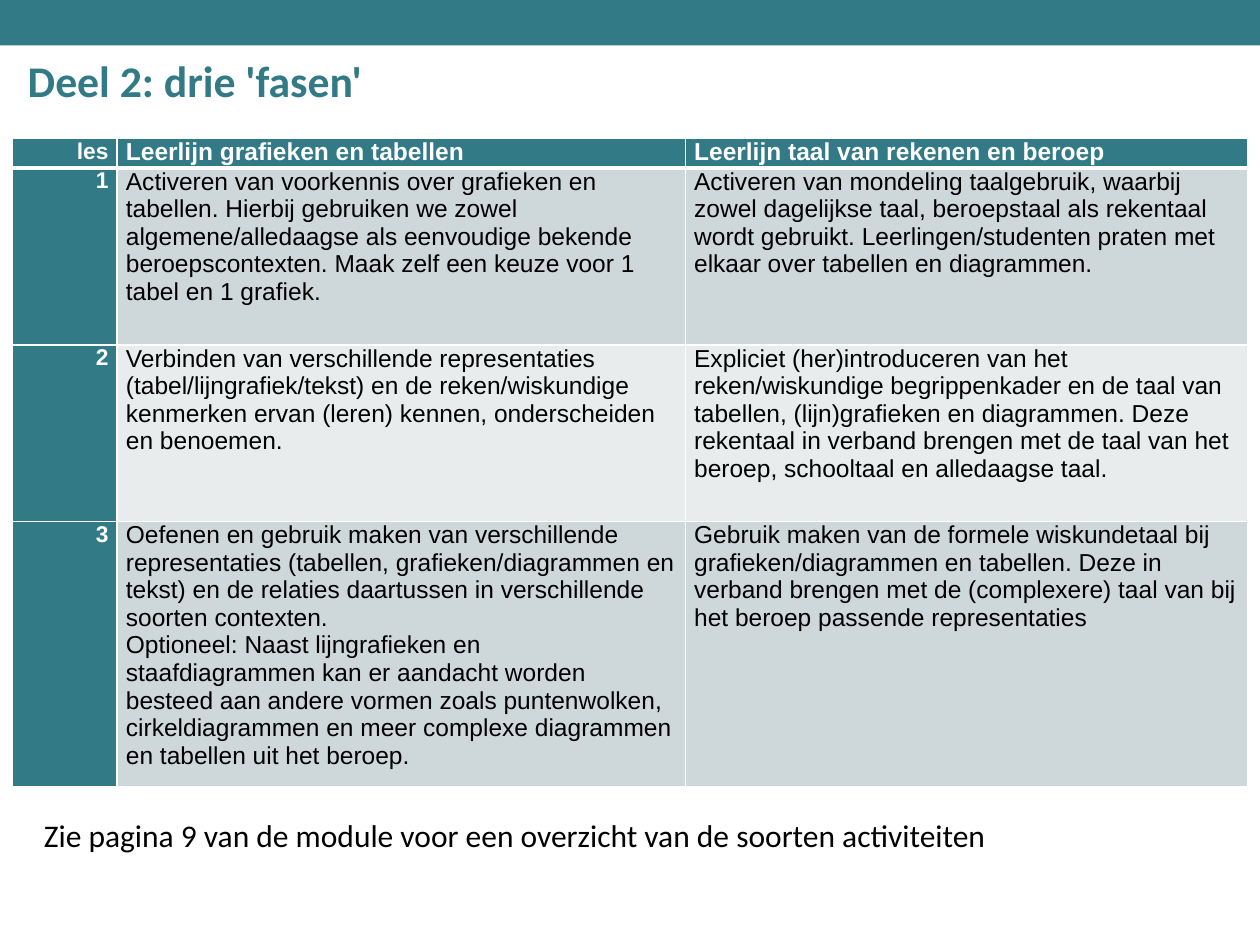
from lxml.etree import SubElement
from pptx import Presentation
from pptx.dml.color import RGBColor
from pptx.enum.shapes import MSO_SHAPE
from pptx.enum.text import MSO_ANCHOR, PP_ALIGN
from pptx.oxml.ns import qn
from pptx.util import Pt

TEAL = RGBColor(0x32, 0x7A, 0x86)
BAND_DARK = RGBColor(0xCE, 0xD7, 0xD9)
BAND_LIGHT = RGBColor(0xE8, 0xEC, 0xED)
WHITE = RGBColor(0xFF, 0xFF, 0xFF)
BLACK = RGBColor(0, 0, 0)


def write_text(text_frame, text, size, color, font="Arial", bold=False, align=PP_ALIGN.LEFT):
    text_frame.text = text
    for paragraph in text_frame.paragraphs:
        paragraph.alignment = align
        paragraph.font.size = Pt(size)
        paragraph.font.name = font
        paragraph.font.bold = bold
        paragraph.font.color.rgb = color


presentation = Presentation()
presentation.slide_width = Pt(720)
presentation.slide_height = Pt(540)
slide = presentation.slides.add_slide(presentation.slide_layouts[5])

banner = slide.shapes.add_shape(MSO_SHAPE.RECTANGLE, 0, 0, Pt(720), Pt(26))
banner.shadow.inherit = False
banner.fill.solid()
banner.fill.fore_color.rgb = TEAL
banner.line.fill.background()

title = slide.shapes.title
title.left, title.top, title.width, title.height = Pt(8.64), Pt(26), Pt(705.6), Pt(39)
write_text(title.text_frame, "Deel 2: drie 'fasen'", 25, TEAL, font="Calibri", bold=True)
title.text_frame.vertical_anchor = MSO_ANCHOR.MIDDLE

note = slide.shapes.add_textbox(Pt(18), Pt(463), Pt(559.5), Pt(29))
note.text_frame.word_wrap = False
write_text(note.text_frame,
           "Zie pagina 9 van de module voor een overzicht van de soorten activiteiten",
           18, BLACK, font="Calibri")

rows = [
    ("les", "Leerlijn grafieken en tabellen", "Leerlijn taal van rekenen en beroep"),
    ("1",
     "Activeren van voorkennis over grafieken en tabellen. Hierbij gebruiken we zowel "
     "algemene/alledaagse als eenvoudige bekende beroepscontexten. Maak zelf een keuze "
     "voor 1 tabel en 1 grafiek.",
     "Activeren van mondeling taalgebruik, waarbij zowel dagelijkse taal, beroepstaal als "
     "rekentaal wordt gebruikt. Leerlingen/studenten praten met elkaar over tabellen en "
     "diagrammen."),
    ("2",
     "Verbinden van verschillende representaties (tabel/lijngrafiek/tekst) en de "
     "reken/wiskundige kenmerken ervan (leren) kennen, onderscheiden en benoemen.",
     "Expliciet (her)introduceren van het reken/wiskundige begrippenkader en de taal van "
     "tabellen, (lijn)grafieken en diagrammen. Deze rekentaal in verband brengen met de taal "
     "van het beroep, schooltaal en alledaagse taal."),
    ("3",
     "Oefenen en gebruik maken van verschillende representaties (tabellen, "
     "grafieken/diagrammen en tekst) en de relaties daartussen in verschillende soorten "
     "contexten.\n"
     "Optioneel: Naast lijngrafieken en staafdiagrammen kan er aandacht worden besteed aan "
     "andere vormen zoals puntenwolken, cirkeldiagrammen en meer complexe diagrammen en "
     "tabellen uit het beroep.",
     "Gebruik maken van de formele wiskundetaal bij grafieken/diagrammen en tabellen. Deze in "
     "verband brengen met de (complexere) taal van bij het beroep passende representaties"),
]
column_widths = [59.76, 324.72, 321.12]
row_heights = [16.5, 101, 101, 151]

table = slide.shapes.add_table(len(rows), len(column_widths), Pt(7.2), Pt(79.2),
                               Pt(sum(column_widths)), Pt(sum(row_heights))).table
for column, width in zip(table.columns, column_widths):
    column.width = Pt(width)
for row, height in zip(table.rows, row_heights):
    row.height = Pt(height)

for row_index, row_texts in enumerate(rows):
    for column_index, text in enumerate(row_texts):
        cell = table.cell(row_index, column_index)
        is_heading = row_index == 0 or column_index == 0
        cell.margin_left = cell.margin_right = Pt(5)
        cell.margin_top = cell.margin_bottom = 0
        write_text(cell.text_frame, text,
                   size=13 if column_index == 0 else 14,
                   color=WHITE if is_heading else BLACK,
                   bold=is_heading,
                   align=PP_ALIGN.RIGHT if column_index == 0 else PP_ALIGN.LEFT)

        properties = cell._tc.get_or_add_tcPr()
        for side in ("L", "R", "T", "B"):
            below_header = (row_index, side) in ((0, "B"), (1, "T"))
            border = SubElement(properties, qn(f"a:ln{side}"), w=str(Pt(3 if below_header else 1)))
            border_fill = SubElement(border, qn("a:solidFill"))
            SubElement(border_fill, qn("a:srgbClr"), val=str(WHITE))
        cell.fill.solid()
        band = BAND_DARK if row_index % 2 else BAND_LIGHT
        cell.fill.fore_color.rgb = TEAL if is_heading else band

presentation.save("out.pptx")
